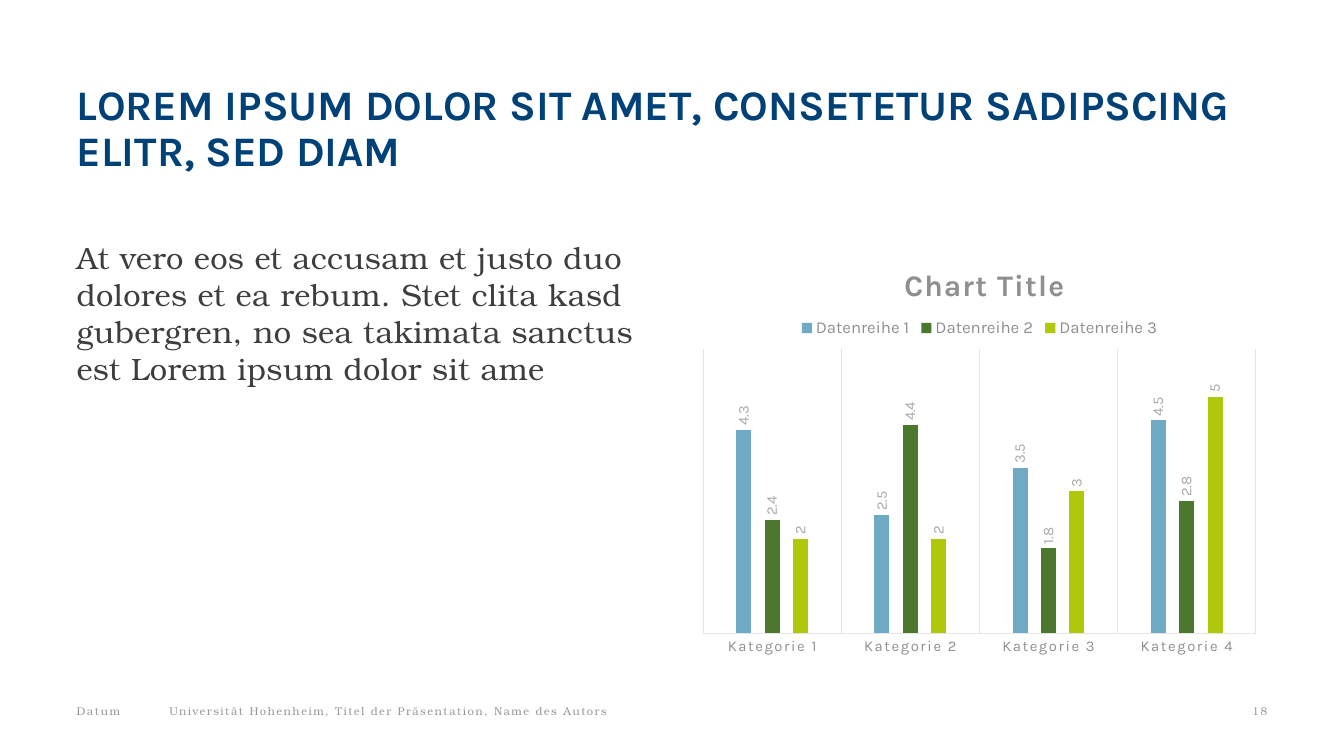
from lxml.etree import SubElement
from pptx import Presentation
from pptx.chart.data import CategoryChartData
from pptx.dml.color import RGBColor
from pptx.enum.chart import XL_CHART_TYPE, XL_LABEL_POSITION, XL_LEGEND_POSITION, XL_TICK_MARK
from pptx.enum.text import MSO_ANCHOR, PP_ALIGN
from pptx.oxml import parse_xml
from pptx.oxml.ns import nsdecls, qn
from pptx.util import Pt

PX = 9144  # 100 px to the inch
SANS, SERIF = "Karla", "TeX Gyre Bonum"
GRID_COLOR = "E5E5E5"

TITLE = {"name": SANS, "size": Pt(30), "bold": True, "color": "004178"}
BODY = {"name": SERIF, "size": Pt(22), "color": "3E3E3C", "spacing": 30}
FOOTER = {"name": SERIF, "size": Pt(8), "color": "989895", "spacing": 100}
CHART_TEXT = {"name": SANS, "size": Pt(10), "color": "525250"}
CHART_TITLE = {"name": SANS, "size": Pt(21.3), "bold": True, "color": "8F8F8D", "spacing": 100}
LEGEND = {"name": SANS, "size": Pt(12), "color": "8F8F8D"}
CATEGORY = {"name": SANS, "size": Pt(10.6), "color": "8F8F8D", "spacing": 120}
VALUE = {"name": SANS, "size": Pt(10.6), "color": "A9A9A7"}

CATEGORIES = [f"Kategorie {number}" for number in range(1, 5)]
SERIES = [
    ("Datenreihe 1", (4.3, 2.5, 3.5, 4.5), "6EAAC3"),
    ("Datenreihe 2", (2.4, 4.4, 1.8, 2.8), "4B782D"),
    ("Datenreihe 3", (2, 2, 3, 5), "AFC80A"),
]


def rgb(color):
    return RGBColor.from_string(color)


def to_emu(*lengths):
    return [length * PX for length in lengths]


def format_font(font, style):
    for key, value in style.items():
        if key == "color":
            font.color.rgb = rgb(value)
        elif key == "spacing":
            font._element.set("spc", str(value))
        else:
            setattr(font, key, value)


def format_line(line):
    line.color.rgb = rgb(GRID_COLOR)
    line.width = Pt(0.75)


def add_text(slide, box, text, style, padding=0, align=PP_ALIGN.LEFT, line_spacing=1.0):
    frame = slide.shapes.add_textbox(*to_emu(*box)).text_frame
    settings = {
        "word_wrap": True, "vertical_anchor": MSO_ANCHOR.TOP,
        "margin_left": 0, "margin_right": 0,
        "margin_top": padding * PX, "margin_bottom": padding * PX,
    }
    for key, value in settings.items():
        setattr(frame, key, value)
    paragraph = frame.paragraphs[0]
    paragraph.alignment = align
    paragraph.line_spacing = line_spacing
    run = paragraph.add_run()
    run.text = text
    format_font(run.font, style)


def place(element, index, **fractions):
    """Give a chart part a manual layout, in fractions of the chart."""
    for old_layout in element.findall(qn("c:layout")):
        element.remove(old_layout)
    layout = parse_xml(f"<c:layout {nsdecls('c')}><c:manualLayout/></c:layout>")
    manual = layout[0]
    if element.tag == qn("c:plotArea"):
        SubElement(manual, qn("c:layoutTarget")).set("val", "inner")
    for name in ("xMode", "yMode"):
        SubElement(manual, qn(f"c:{name}")).set("val", "edge")
    for name, value in fractions.items():
        SubElement(manual, qn(f"c:{name}")).set("val", str(value))
    element.insert(index, layout)


def format_axes(chart):
    axis = chart.category_axis
    axis.major_tick_mark = axis.minor_tick_mark = XL_TICK_MARK.NONE
    axis.has_major_gridlines = True
    format_line(axis.major_gridlines.format.line)
    format_line(axis.format.line)
    format_font(axis.tick_labels.font, CATEGORY)
    values = chart.value_axis
    values.minimum_scale, values.maximum_scale = 0, 6
    values.has_major_gridlines = False
    values.visible = False


def format_series(series, color):
    series.format.fill.solid()
    series.format.fill.fore_color.rgb = rgb(color)
    labels = series.data_labels
    labels.show_value = True
    labels.position = XL_LABEL_POSITION.OUTSIDE_END
    format_font(labels.font, VALUE)
    body = labels._element.find(f".//{qn('a:bodyPr')}")
    body.set("rot", "-5400000")
    body.set("vert", "horz")


def add_column_chart(slide, box):
    data = CategoryChartData()
    data.categories = CATEGORIES
    for name, values, _ in SERIES:
        data.add_series(name, values)
    chart = slide.shapes.add_chart(XL_CHART_TYPE.COLUMN_CLUSTERED, *to_emu(*box), data).chart
    format_font(chart.font, CHART_TEXT)

    chart.has_title = True
    paragraph = chart.chart_title.text_frame.paragraphs[0]
    run = paragraph.add_run()
    run.text = "Chart Title"
    format_font(run.font, CHART_TITLE)
    place(chart.chart_title._element, 1, x=0.36, y=0.05)

    chart.has_legend = True
    chart.legend.position = XL_LEGEND_POSITION.TOP
    chart.legend.include_in_layout = False
    format_font(chart.legend.font, LEGEND)
    place(chart.legend._element, 1, x=0.18, y=0.18, w=0.64, h=0.06)

    plot = chart.plots[0]
    plot.gap_width, plot.overlap = 444, -90
    plot.vary_by_categories = False
    for series, (_, _, color) in zip(plot.series, SERIES):
        format_series(series, color)
    format_axes(chart)
    place(chart._chartSpace.chart.plotArea, 0, x=0.02, y=0.26, w=0.96, h=0.67)


def main():
    presentation = Presentation()
    presentation.slide_width, presentation.slide_height = to_emu(1333, 750)
    slide = presentation.slides.add_slide(presentation.slide_layouts[6])

    add_text(slide, (76, 84, 1181, 114),
             "LOREM IPSUM DOLOR SIT AMET, CONSETETUR SADIPSCING ELITR, SED DIAM",
             TITLE, line_spacing=0.9)
    add_text(slide, (76, 237, 571, 421),
             "At vero eos et accusam et justo duo dolores et ea rebum. Stet clita kasd "
             "gubergren, no sea takimata sanctus est Lorem ipsum dolor sit ame", BODY)
    add_column_chart(slide, (686, 237, 571, 421))

    footers = [
        (76, 78, "Datum", PP_ALIGN.LEFT),
        (168, 1000, "Universität Hohenheim, Titel der Präsentation, Name des Autors", PP_ALIGN.LEFT),
        (1179, 78, "18", PP_ALIGN.RIGHT),
    ]
    for left, width, text, align in footers:
        add_text(slide, (left, 694, width, 24), text, FOOTER, padding=5, align=align)

    presentation.save("out.pptx")


if __name__ == "__main__":
    main()
